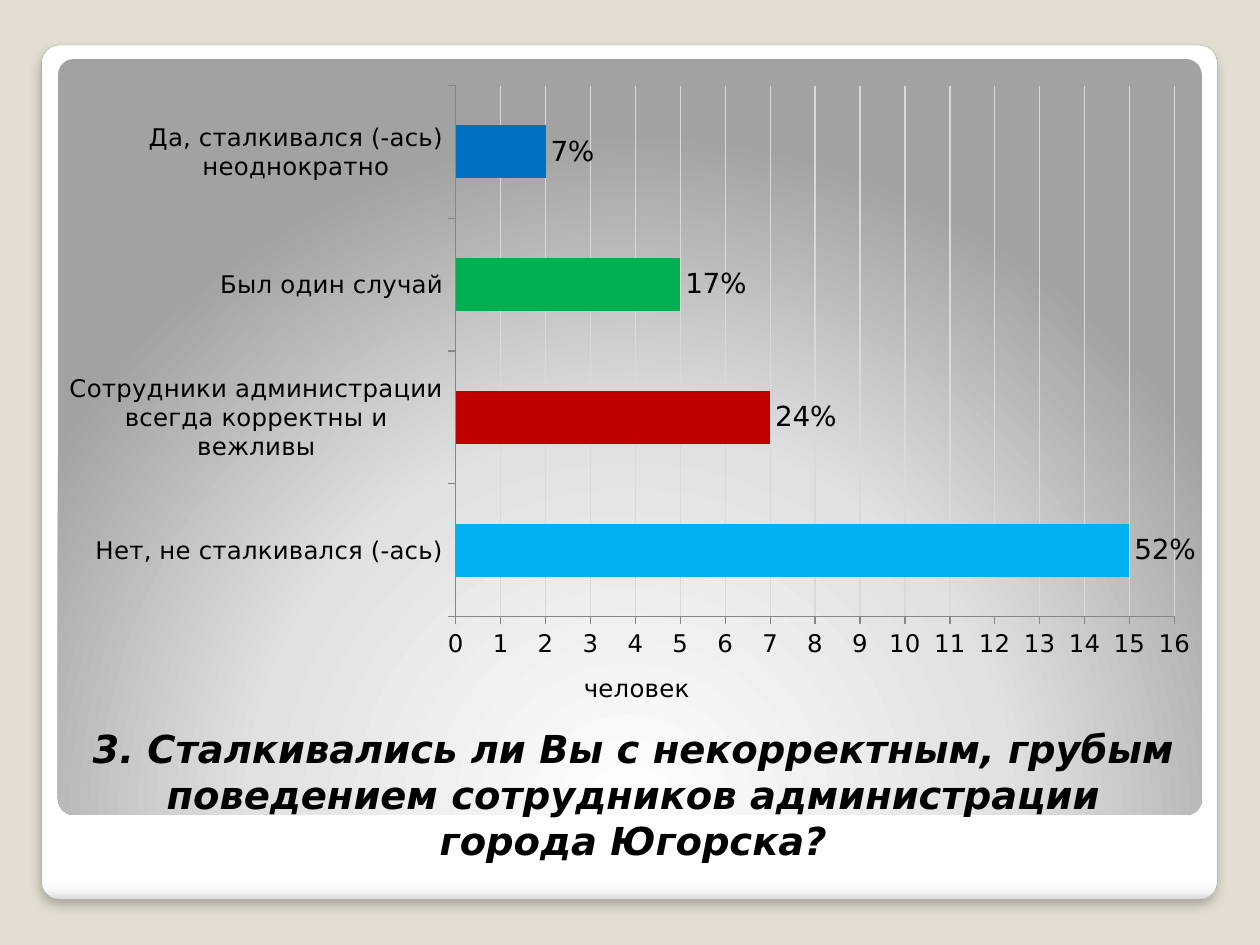
"""Build a survey slide with a bar chart of answers and the question below it."""
import pptx
import pptx.chart.data
import pptx.dml.color
import pptx.enum.chart
import pptx.enum.shapes
import pptx.enum.text
import pptx.oxml
import pptx.oxml.ns
import pptx.util
from pptx.util import Cm

FONT = "DejaVu Sans"
BLACK = "000000"
AXIS_GREY = "868686"
QUESTION = ("3. Сталкивались ли Вы с некорректным, грубым поведением "
            "сотрудников администрации города Югорска?")
ANSWERS = [
    ("Нет, не сталкивался (-ась)", 15, "52%", "00B0F0"),
    ("Сотрудники администрации всегда корректны и вежливы", 7, "24%", "C00000"),
    ("Был один случай", 5, "17%", "00B050"),
    ("Да, сталкивался (-ась) неоднократно", 2, "7%", "0070C0"),
]


def rgb(value):
    return pptx.dml.color.RGBColor.from_string(value)


def xml(tag, body, attrs=""):
    """Return a parsed element with the drawing and chart namespaces."""
    ns = pptx.oxml.ns.nsdecls("a", "c")
    return pptx.oxml.parse_xml(f"<{tag} {ns} {attrs}>{body}</{tag}>")


def style_font(font, size, color=BLACK, bold=False, italic=False):
    font.name = FONT
    font.size = pptx.util.Pt(size)
    font.bold = bold
    font.italic = italic
    font.color.rgb = rgb(color)


def write_text(tf, text, **style):
    p = tf.paragraphs[0]
    r = p.add_run()
    r.text = text
    style_font(r.font, **style)
    return p


def add_panel(slide, box, stops, direction):
    """Add a rounded panel filled with a gradient of (percent, colour) stops."""
    sp = slide.shapes.add_shape(pptx.enum.shapes.MSO_SHAPE.ROUNDED_RECTANGLE, *box)
    sp.adjustments[0] = 0.021
    sp.shadow.inherit = False
    sp.line.fill.background()
    stop_list = "".join(
        f'<a:gs pos="{pos * 1000}"><a:srgbClr val="{color}"/></a:gs>'
        for pos, color in stops)
    grad = xml("a:gradFill", f"<a:gsLst>{stop_list}</a:gsLst>{direction}",
               'rotWithShape="1"')
    sp._element.spPr.find(pptx.oxml.ns.qn("a:prstGeom")).addnext(grad)
    return sp


def add_card(slide):
    sp = add_panel(slide, (Cm(0.84), Cm(0.91), Cm(23.7), Cm(17.22)),
                   [(0, "FFFFFF"), (98, "FFFFFF"), (99, "F7F7F7"), (100, "DADADA")],
                   '<a:lin ang="5400000" scaled="0"/>')
    sp.line.color.rgb = rgb("A4A4A4")
    sp.line.width = pptx.util.Pt(0.16)
    effects = sp._element.spPr.find(pptx.oxml.ns.qn("a:effectLst"))
    effects.append(xml(
        "a:outerShdw",
        f'<a:srgbClr val="{BLACK}"><a:alpha val="25000"/></a:srgbClr>',
        'blurRad="76200" dist="50800" dir="5400000" algn="t" rotWithShape="0"'))


def add_backdrop(slide):
    add_panel(slide, (Cm(1.17), Cm(1.19), Cm(23.06), Cm(15.24)),
              [(0, "FFFFFF"), (55, "E1E1E1"), (100, "A2A2A2")],
              '<a:path path="circle"><a:fillToRect l="50000" t="175000" '
              'r="50000" b="-75000"/></a:path>')


def add_question(slide):
    tf = slide.shapes.add_textbox(Cm(1.4), Cm(14.53), Cm(22.73), Cm(3)).text_frame
    tf.word_wrap = True
    tf.vertical_anchor = pptx.enum.text.MSO_ANCHOR.BOTTOM
    p = write_text(tf, QUESTION, size=22, bold=True, italic=True)
    p.alignment = pptx.enum.text.PP_ALIGN.CENTER


def set_layout(element, before, inner=False, **place):
    """Place a chart part by fractions of the chart, ahead of its child `before`."""
    for old in element.findall(pptx.oxml.ns.qn("c:layout")):
        element.remove(old)
    body = '<c:layoutTarget val="inner"/>' if inner else ""
    body += '<c:xMode val="edge"/><c:yMode val="edge"/>'
    body += "".join(f'<c:{key} val="{value}"/>' for key, value in place.items())
    layout = xml("c:layout", f"<c:manualLayout>{body}</c:manualLayout>")
    element.find(pptx.oxml.ns.qn(before)).addprevious(layout)


def style_axis(axis):
    axis.major_tick_mark = pptx.enum.chart.XL_TICK_MARK.OUTSIDE
    axis.minor_tick_mark = pptx.enum.chart.XL_TICK_MARK.NONE
    axis.format.line.color.rgb = rgb(AXIS_GREY)
    axis.format.line.width = pptx.util.Pt(0.75)
    style_font(axis.tick_labels.font, 14)


def style_value_axis(axis):
    style_axis(axis)
    axis.minimum_scale, axis.maximum_scale, axis.major_unit = 0, 16, 1
    axis.has_major_gridlines = True
    grid = axis.major_gridlines.format.line
    grid.color.rgb = rgb("D9D9D9")
    grid.width = pptx.util.Pt(0.75)
    title = axis.axis_title
    write_text(title.text_frame, "человек", size=14)
    title._element.get_or_add_tx()
    for overlay in title._element.findall(pptx.oxml.ns.qn("c:overlay")):
        title._element.remove(overlay)
    title._element.find(pptx.oxml.ns.qn("c:tx")).addnext(
        xml("c:overlay", "", 'val="0"'))
    set_layout(title._element, "c:overlay", x=0.45, y=0.94)


def style_bars(plot):
    plot.gap_width = 150
    plot.vary_by_categories = False
    series = plot.series[0]
    series.format.fill.solid()
    series.format.fill.fore_color.rgb = rgb("F07F09")
    series.invert_if_negative = False
    outside = pptx.enum.chart.XL_LABEL_POSITION.OUTSIDE_END
    labels = series.data_labels
    labels.show_value = True
    labels.position = outside
    style_font(labels.font, 16)
    for i, (_, _, share, color) in enumerate(ANSWERS):
        point = series.points[i]
        point.format.fill.solid()
        point.format.fill.fore_color.rgb = rgb(color)
        write_text(point.data_label.text_frame, share, size=16)
        point.data_label.position = outside


def add_answer_chart(slide):
    data = pptx.chart.data.CategoryChartData()
    data.categories = [answer[0] for answer in ANSWERS]
    data.add_series("Series 1", [answer[1] for answer in ANSWERS])
    chart = slide.shapes.add_chart(
        pptx.enum.chart.XL_CHART_TYPE.BAR_CLUSTERED,
        Cm(1.4), Cm(1.47), Cm(22.73), Cm(12.85), data).chart
    chart.has_legend = False
    chart.has_title = False
    style_font(chart.font, 18)
    style_axis(chart.category_axis)
    style_value_axis(chart.value_axis)
    style_bars(chart.plots[0])
    set_layout(chart._chartSpace.chart.plotArea, "c:barChart", inner=True,
               x=0.34, y=0.02, w=0.64, h=0.84)


def main():
    prs = pptx.Presentation()
    prs.slide_width, prs.slide_height = Cm(25.4), Cm(19.05)
    slide = prs.slides.add_slide(prs.slide_layouts[6])
    slide.background.fill.solid()
    slide.background.fill.fore_color.rgb = rgb("E3DED1")
    add_card(slide)
    add_backdrop(slide)
    add_question(slide)
    add_answer_chart(slide)
    prs.save("out.pptx")


if __name__ == "__main__":
    main()
